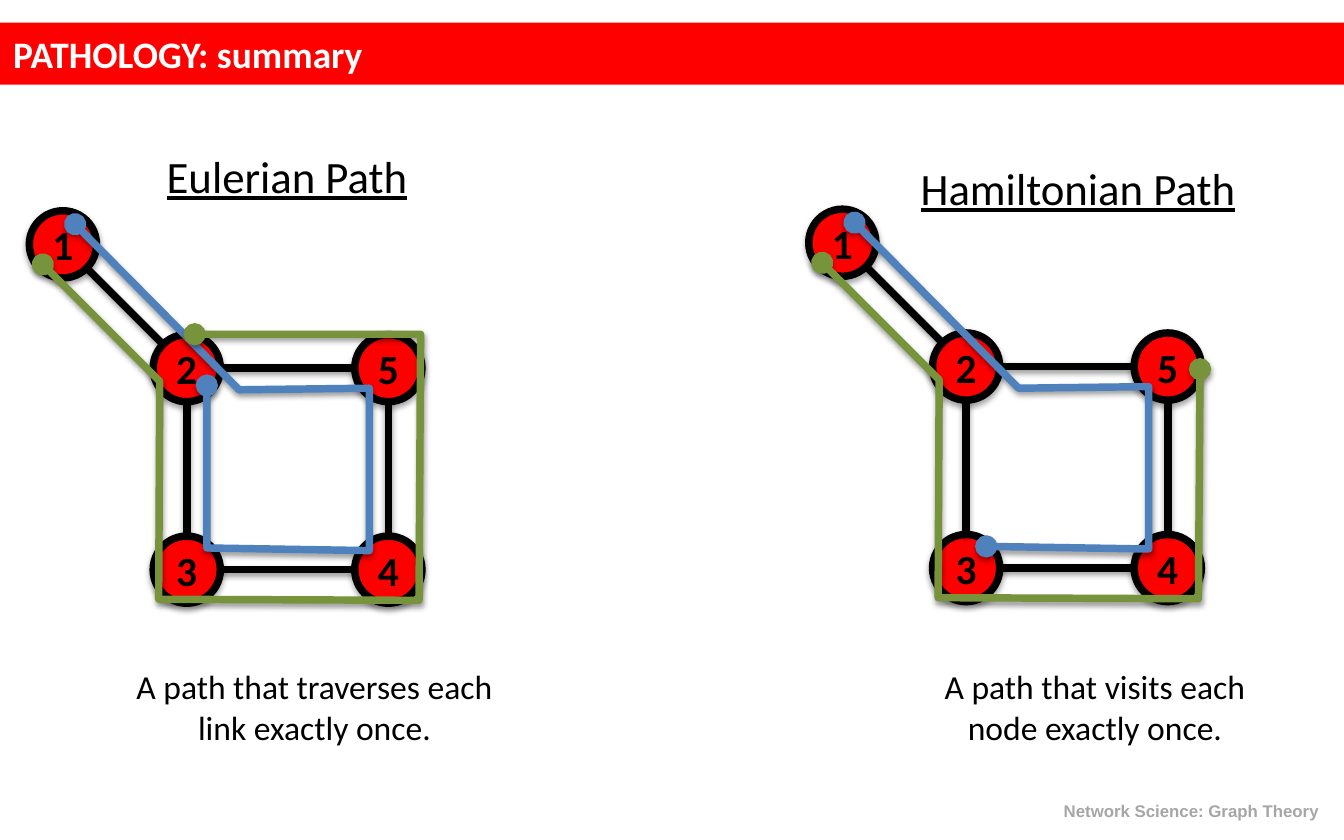
"""Build a slide that compares Eulerian and Hamiltonian paths on one graph."""
import math
from dataclasses import dataclass

from lxml import etree
from pptx import Presentation
from pptx import util as u
from pptx.dml.color import RGBColor
from pptx.enum import shapes, text
from pptx.oxml import ns
from pptx.shapes import base, group

BLACK = RGBColor(0x00, 0x00, 0x00)
WHITE = RGBColor(0xFF, 0xFF, 0xFF)
RED = RGBColor(0xFF, 0x00, 0x00)
BLUE = RGBColor(0x4F, 0x81, 0xBD)
GREEN = RGBColor(0x77, 0x93, 0x3C)
GRAY = RGBColor(0xA6, 0xA6, 0xA6)

Point = tuple[float, float]
STROKE = u.Pt(4)
NODE_SIZE = 1.27
SIDE = 3.81
TAIL = 2.34


@dataclass(frozen=True)
class Edge:
    start: str
    end: str


@dataclass(frozen=True)
class Route:
    color: RGBColor
    points: list[Point]


@dataclass(frozen=True)
class Graph:
    origin: Point
    routes: list[Route]


@dataclass(frozen=True)
class Label:
    words: str
    left: float
    top: float
    width: float
    height: float
    size: float
    color: RGBColor = BLACK
    font: str = "Calibri"
    bold: bool = False
    underline: bool = False
    align: text.PP_ALIGN = text.PP_ALIGN.LEFT


CENTERS: dict[str, Point] = {
    "2": (0, 0),
    "5": (SIDE, 0),
    "4": (SIDE, SIDE),
    "3": (0, SIDE),
    "1": (-TAIL, -TAIL),
}
EDGES = [Edge("5", "2"), Edge("2", "3"), Edge("3", "4"), Edge("4", "5"), Edge("1", "2")]
INNER = [(-2.11, -2.72), (0.99, 0.41), (3.45, 0.38), (3.45, 3.45), (0.38, 3.4)]
OUTER = [(-2.72, -1.96), (-0.51, 0.25), (-0.53, 4.37), (4.39, 4.39)]
GRAPHS = [
    Graph((3.53, 6.96), [
        Route(BLUE, INNER + [(0.38, 0.33)]),
        Route(GREEN, OUTER + [(4.42, -0.64), (0.15, -0.64)]),
    ]),
    Graph((18.26, 6.93), [
        Route(BLUE, INNER),
        Route(GREEN, OUTER + [(4.42, 0.05)]),
    ]),
]
TITLE = Label("PATHOLOGY: summary", 0, 0.43, 25.4, 1.17, 20, WHITE, bold=True)
LABELS = [
    Label("Network Science: Graph Theory", 17.98, 15.01, 7.19, 0.64, 9, GRAY,
          "Arial", bold=True, align=text.PP_ALIGN.RIGHT),
    Label("Eulerian Path", 2.9, 2.69, 5.72, 1.27, 24, underline=True),
    Label("Hamiltonian Path", 17.15, 2.92, 7.9, 1.27, 24, underline=True),
    Label("A path that visits each node exactly once.", 17.15, 12.47, 7.09, 1.8, 18,
          align=text.PP_ALIGN.CENTER),
    Label("A path that traverses each link exactly once.", 1.83, 12.47, 8.23, 1.8, 18,
          align=text.PP_ALIGN.CENTER),
]


def write(shape: base.BaseShape, label: Label) -> None:
    frame = shape.text_frame
    frame.word_wrap = True
    para = frame.paragraphs[0]
    para.alignment = label.align
    span = para.add_run()
    span.text = label.words
    span.font.name = label.font
    span.font.size = u.Pt(label.size)
    span.font.color.rgb = label.color
    span.font.bold = label.bold
    span.font.underline = label.underline


def draw_label(page, label: Label) -> None:
    box = page.shapes.add_textbox(
        u.Cm(label.left), u.Cm(label.top), u.Cm(label.width), u.Cm(label.height))
    write(box, label)


def draw_title(page, label: Label) -> None:
    bar = page.shapes.add_shape(
        shapes.MSO_SHAPE.RECTANGLE,
        u.Cm(label.left), u.Cm(label.top), u.Cm(label.width), u.Cm(label.height))
    bar.shadow.inherit = False
    bar.fill.solid()
    bar.fill.fore_color.rgb = RED
    bar.line.fill.background()
    write(bar, label)


def set_stroke(shape: base.BaseShape, color: RGBColor) -> None:
    shape.line.color.rgb = color
    shape.line.width = STROKE


def add_shadow(shape: base.BaseShape, distance: int, opacity: int) -> None:
    effects = etree.SubElement(shape.element.spPr, ns.qn("a:effectLst"))
    shadow = etree.SubElement(
        effects, ns.qn("a:outerShdw"), blurRad="40000", dist=str(distance),
        dir="5400000", rotWithShape="0")
    tint = etree.SubElement(shadow, ns.qn("a:srgbClr"), val=str(BLACK))
    etree.SubElement(tint, ns.qn("a:alpha"), val=str(opacity * 1000))


def place(origin: Point, point: Point) -> tuple[u.Cm, u.Cm]:
    return u.Cm(origin[0] + point[0]), u.Cm(origin[1] + point[1])


def draw_node(network: group.GroupShape, name: str, center: Point, origin: Point) -> None:
    radius = NODE_SIZE / 2
    left, top = place(origin, (center[0] - radius, center[1] - radius))
    disc = network.shapes.add_shape(
        shapes.MSO_SHAPE.OVAL, left, top, u.Cm(NODE_SIZE), u.Cm(NODE_SIZE))
    disc.fill.solid()
    disc.fill.fore_color.rgb = RED
    set_stroke(disc, BLACK)
    add_shadow(disc, 23000, 35)
    frame = disc.text_frame
    frame.margin_left = frame.margin_right = frame.margin_top = frame.margin_bottom = 0
    frame.vertical_anchor = text.MSO_ANCHOR.MIDDLE
    write(disc, Label(name, 0, 0, 0, 0, 22.2, bold=True, align=text.PP_ALIGN.CENTER))


def draw_edge(network: group.GroupShape, edge: Edge, origin: Point) -> None:
    (x1, y1), (x2, y2) = CENTERS[edge.start], CENTERS[edge.end]
    trim = NODE_SIZE / 2 / math.dist((x1, y1), (x2, y2))
    dx, dy = (x2 - x1) * trim, (y2 - y1) * trim
    link = network.shapes.add_connector(
        shapes.MSO_CONNECTOR.STRAIGHT,
        *place(origin, (x1 + dx, y1 + dy)), *place(origin, (x2 - dx, y2 - dy)))
    set_stroke(link, BLACK)
    add_shadow(link, 20000, 38)


def draw_route(network: group.GroupShape, route: Route, origin: Point) -> None:
    start, *rest = [place(origin, point) for point in route.points]
    builder = network.shapes.build_freeform(*start)
    builder.add_line_segments(rest, close=False)
    trail = builder.convert_to_shape()
    trail.fill.background()
    set_stroke(trail, route.color)
    outline = trail.element.spPr.find(ns.qn("a:ln"))
    for end in ("a:headEnd", "a:tailEnd"):
        etree.SubElement(outline, ns.qn(end), type="oval")
    add_shadow(trail, 20000, 38)


def draw_graph(page, graph: Graph) -> None:
    network = page.shapes.add_group_shape()
    for name, center in CENTERS.items():
        draw_node(network, name, center, graph.origin)
    for edge in EDGES:
        draw_edge(network, edge, graph.origin)
    for route in graph.routes:
        draw_route(network, route, graph.origin)


def main() -> None:
    deck = Presentation()
    deck.slide_width, deck.slide_height = u.Cm(25.4), u.Cm(15.88)
    page = deck.slides.add_slide(deck.slide_layouts[6])
    draw_title(page, TITLE)
    for graph in GRAPHS:
        draw_graph(page, graph)
    for label in LABELS:
        draw_label(page, label)
    deck.save("out.pptx")


if __name__ == "__main__":
    main()
